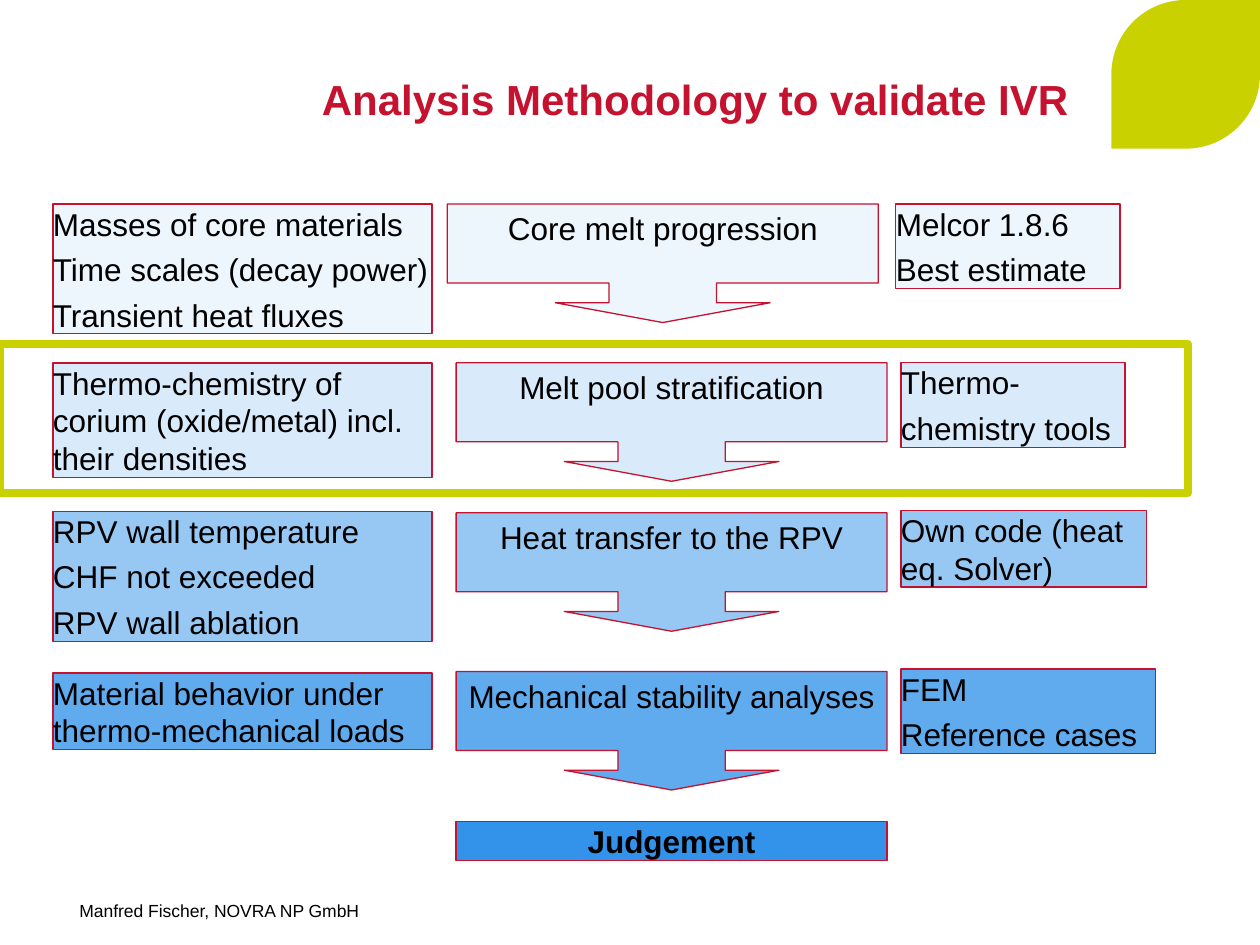
from pptx import Presentation
from pptx import util as u
from pptx.dml.color import RGBColor
from pptx.enum import shapes, text

RED = RGBColor(0xC4, 0x12, 0x2F)
GREEN = RGBColor(0xC9, 0xD2, 0x00)
BLACK = RGBColor(0, 0, 0)
ICE = RGBColor(0xED, 0xF5, 0xFD)
PALE = RGBColor(0xD9, 0xEB, 0xFB)
SKY = RGBColor(0x97, 0xC7, 0xF3)
BLUE = RGBColor(0x60, 0xAA, 0xEE)
DEEP = RGBColor(0x33, 0x92, 0xE9)
RECT = shapes.MSO_SHAPE.RECTANGLE
CALLOUT = shapes.MSO_SHAPE.DOWN_ARROW_CALLOUT
LEFT, CENTER, RIGHT = text.PP_ALIGN.LEFT, text.PP_ALIGN.CENTER, text.PP_ALIGN.RIGHT
TOP, MIDDLE, BOTTOM = text.MSO_ANCHOR.TOP, text.MSO_ANCHOR.MIDDLE, text.MSO_ANCHOR.BOTTOM

prs = Presentation()
prs.slide_width, prs.slide_height = u.Inches(10), u.Inches(7.5)
COL, ROW = prs.slide_width / 100, prs.slide_height / 75
s = prs.slides.add_slide(prs.slide_layouts[6])


def add_box(kind, x, y, w, h, fill=None, line=None, weight=0.75):
    at = [round(v) for v in (x * COL, y * ROW, w * COL, h * ROW)]
    if kind is None:
        return s.shapes.add_textbox(*at)
    sp = s.shapes.add_shape(kind, *at)
    sp.shadow.inherit = False
    if fill is None:
        sp.fill.background()
    else:
        sp.fill.solid()
        sp.fill.fore_color.rgb = fill
    if line is None:
        sp.line.fill.background()
    else:
        sp.line.color.rgb = line
        sp.line.width = u.Pt(weight)
    return sp


def write(sp, lines, align=LEFT, anchor=MIDDLE, size=18, color=BLACK, bold=False):
    tf = sp.text_frame
    tf.word_wrap = True
    tf.vertical_anchor = anchor
    tf.margin_left = tf.margin_right = tf.margin_top = tf.margin_bottom = 0
    for i, line in enumerate(lines):
        p = tf.add_paragraph() if i else tf.paragraphs[0]
        p.alignment = align
        p.space_before = u.Pt(4.4 if i else 0)
        r = p.add_run()
        r.text = line
        r.font.name = "Arial"
        r.font.size = u.Pt(size)
        r.font.bold = bold
        r.font.color.rgb = color
    return tf


leaf = add_box(shapes.MSO_SHAPE.ROUND_2_DIAG_RECTANGLE, 88.2, 0, 11.8, 11.8, GREEN)
leaf.adjustments[0] = 0.5
leaf.adjustments[1] = 0

title = add_box(None, 5.9, 2.8, 78.9, 7.1)
tf = write(title, ["Analysis Methodology to validate IVR"], RIGHT, BOTTOM, 24, RED, True)
tf.paragraphs[0].line_spacing = 0.9
footer = add_box(None, 6.3, 71.4, 66.9, 3)
write(footer, ["Manfred Fischer, NOVRA NP GmbH"], anchor=TOP, size=10)

steps = [
    (ICE, "Core melt progression", 35.5, 16.2,
     ["Masses of core materials", "Time scales (decay power)", "Transient heat fluxes"], 16.2, 10.3,
     ["Melcor 1.8.6", "Best estimate"], 71.1, 16.2, 17.8, 6.7),
    (PALE, "Melt pool stratification", 36.2, 28.8,
     ["Thermo-chemistry of corium (oxide/metal) incl. their densities"], 28.8, 9.1,
     ["Thermo-", "chemistry tools"], 71.5, 28.8, 17.8, 6.7),
    (SKY, "Heat transfer to the RPV", 36.2, 40.7,
     ["RPV wall temperature", "CHF not exceeded", "RPV wall ablation"], 40.6, 10.3,
     ["Own code (heat eq. Solver)"], 71.5, 40.5, 19.5, 6.1),
    (BLUE, "Mechanical stability analyses", 36.2, 53.3,
     ["Material behavior under thermo-mechanical loads"], 53.4, 6.1,
     ["FEM", "Reference cases"], 71.5, 53.1, 20.2, 6.7),
]
for fill, step, x, y, inputs, in_y, in_h, tools, tool_x, tool_y, tool_w, tool_h in steps:
    sp = add_box(CALLOUT, x, y, 34.2, 9.4, fill, RED)
    for i, value in enumerate((0.906, 0.906, 0.167, 0.667)):
        sp.adjustments[i] = value
    tf = write(sp, [step], CENTER, TOP)
    tf.margin_top = round(0.4 * ROW)
    write(add_box(RECT, 4.2, in_y, 30.1, in_h, fill, RED), inputs)
    write(add_box(RECT, tool_x, tool_y, tool_w, tool_h, fill, RED), tools)

write(add_box(RECT, 36.2, 65.2, 34.2, 3.1, DEEP, RED), ["Judgement"], CENTER, bold=True)
add_box(RECT, 0, 27.3, 94.3, 11.8, line=GREEN, weight=4.5)

prs.save("out.pptx")
